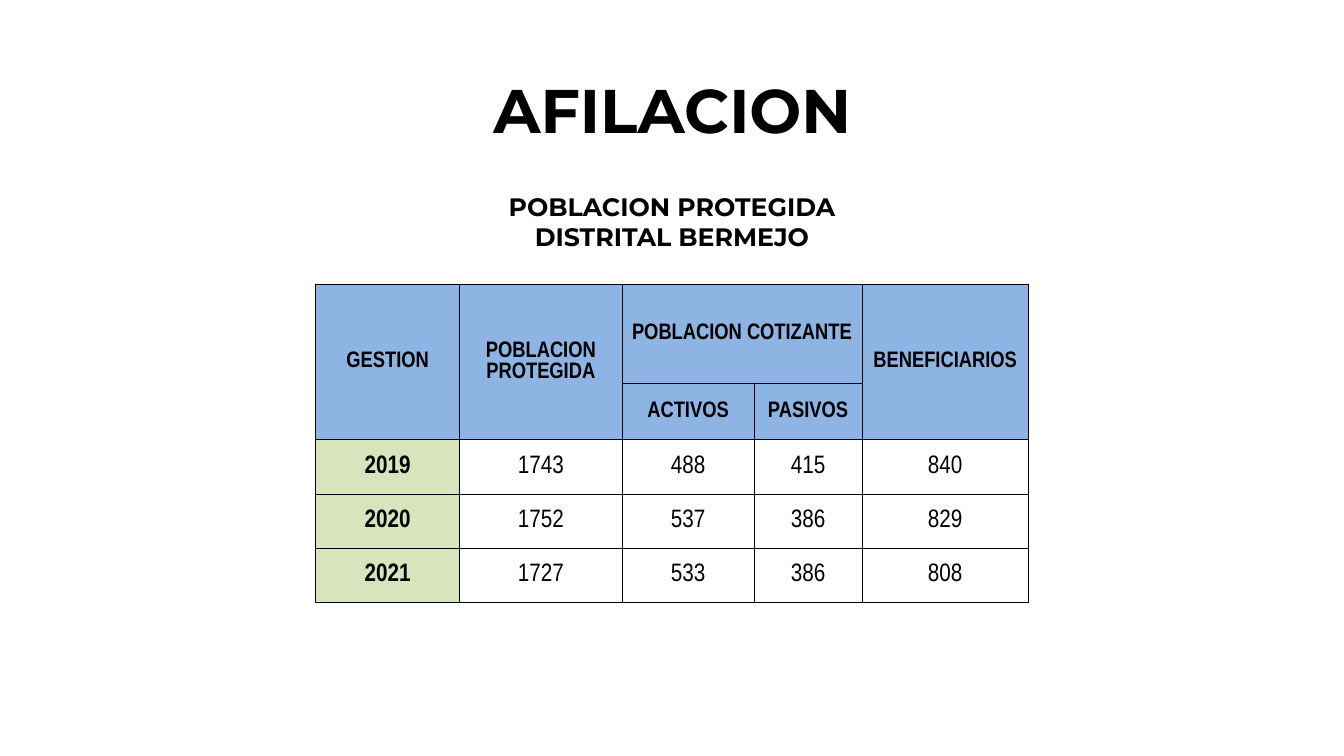
"""Build the slide with the protected population table."""
from lxml.etree import SubElement
from pptx import Presentation
from pptx.dml.color import RGBColor
from pptx.enum.text import MSO_ANCHOR as Anchor, PP_ALIGN as Align
from pptx.oxml.ns import qn
from pptx.util import Inches, Pt

COLORS = {"text": "000000", "border": "000000", "header": "8DB4E3", "year": "D7E4BC"}
HEADING_FONT = "Montserrat"
TABLE_FONT = "Arial Narrow"
COLUMN_WIDTHS = [1.43, 1.61, 1.31, 1.07, 1.65]
ROW_HEIGHTS = [0.98, 0.56, 0.54, 0.54, 0.54]
HEADER_ROWS = 2
ROWS = [
    ["GESTION", "POBLACION PROTEGIDA", "POBLACION COTIZANTE", "", "BENEFICIARIOS"],
    ["", "", "ACTIVOS", "PASIVOS", ""],
    ["2019", "1743", "488", "415", "840"],
    ["2020", "1752", "537", "386", "829"],
    ["2021", "1727", "533", "386", "808"],
]
MERGES = [((0, 0), (1, 0)), ((0, 1), (1, 1)), ((0, 2), (0, 3)), ((0, 4), (1, 4))]


def write(tf, text, font, size, bold=True):
    """Put centred text in a text frame."""
    tf.text = text
    p = tf.paragraphs[0]
    p.alignment = Align.CENTER
    for r in p.runs:
        r.font.name = font
        r.font.size = Pt(size)
        r.font.bold = bold
        r.font.color.rgb = RGBColor.from_string(COLORS["text"])


def add_title(s, text):
    """Fill and place the title placeholder."""
    sp = s.shapes.title
    sp.left, sp.top, sp.width, sp.height = map(Inches, (0.92, 0.4, 11.5, 1.45))
    write(sp.text_frame, text, HEADING_FONT, 44)
    sp.text_frame.vertical_anchor = Anchor.MIDDLE
    sp.text_frame.paragraphs[0].line_spacing = 0.9


def add_subtitle(s, text):
    """Add the wrapped heading above the table."""
    sp = s.shapes.add_textbox(*map(Inches, (4.43, 1.85, 4.47, 0.71)))
    sp.text_frame.word_wrap = True
    write(sp.text_frame, text, HEADING_FONT, 18)


def set_borders(cell, top_width):
    """Draw the four borders of a cell."""
    tc_pr = cell._tc.get_or_add_tcPr()
    for side in "LRTB":
        width = top_width if side == "T" else 0.5
        ln = SubElement(tc_pr, qn(f"a:ln{side}"), w=str(Pt(width)))
        fill = SubElement(ln, qn("a:solidFill"))
        SubElement(fill, qn("a:srgbClr"), val=COLORS["border"])


def format_cell(cell, row, col, text):
    """Write a cell and give it its borders and fill."""
    is_header = row < HEADER_ROWS
    is_year = not is_header and col == 0
    write(cell.text_frame, text, TABLE_FONT, 16 if is_header else 18, is_header or is_year)
    cell.vertical_anchor = Anchor.MIDDLE
    cell.margin_left = cell.margin_right = cell.margin_top = cell.margin_bottom = 0
    set_borders(cell, 1 if row == 0 else 0.5)
    if is_header or is_year:
        cell.fill.solid()
        color = COLORS["header" if is_header else "year"]
        cell.fill.fore_color.rgb = RGBColor.from_string(color)
    else:
        cell.fill.background()


def add_population_table(s):
    """Add the population table with its merged header."""
    box = map(Inches, (3.13, 2.82, sum(COLUMN_WIDTHS), sum(ROW_HEIGHTS)))
    table = s.shapes.add_table(len(ROWS), len(COLUMN_WIDTHS), *box).table
    table.first_row = table.horz_banding = False
    for column, width in zip(table.columns, COLUMN_WIDTHS):
        column.width = Inches(width)
    for row, height in zip(table.rows, ROW_HEIGHTS):
        row.height = Inches(height)
    for row, texts in enumerate(ROWS):
        for col, text in enumerate(texts):
            format_cell(table.cell(row, col), row, col, text)
    for first, last in MERGES:
        table.cell(*first).merge(table.cell(*last))


def main():
    """Build and save the presentation."""
    prs = Presentation()
    prs.slide_width, prs.slide_height = Inches(13.33), Inches(7.5)
    s = prs.slides.add_slide(prs.slide_layouts[5])
    add_title(s, "AFILACION")
    add_population_table(s)
    add_subtitle(s, "POBLACION PROTEGIDA DISTRITAL BERMEJO")
    prs.save("out.pptx")


if __name__ == "__main__":
    main()
